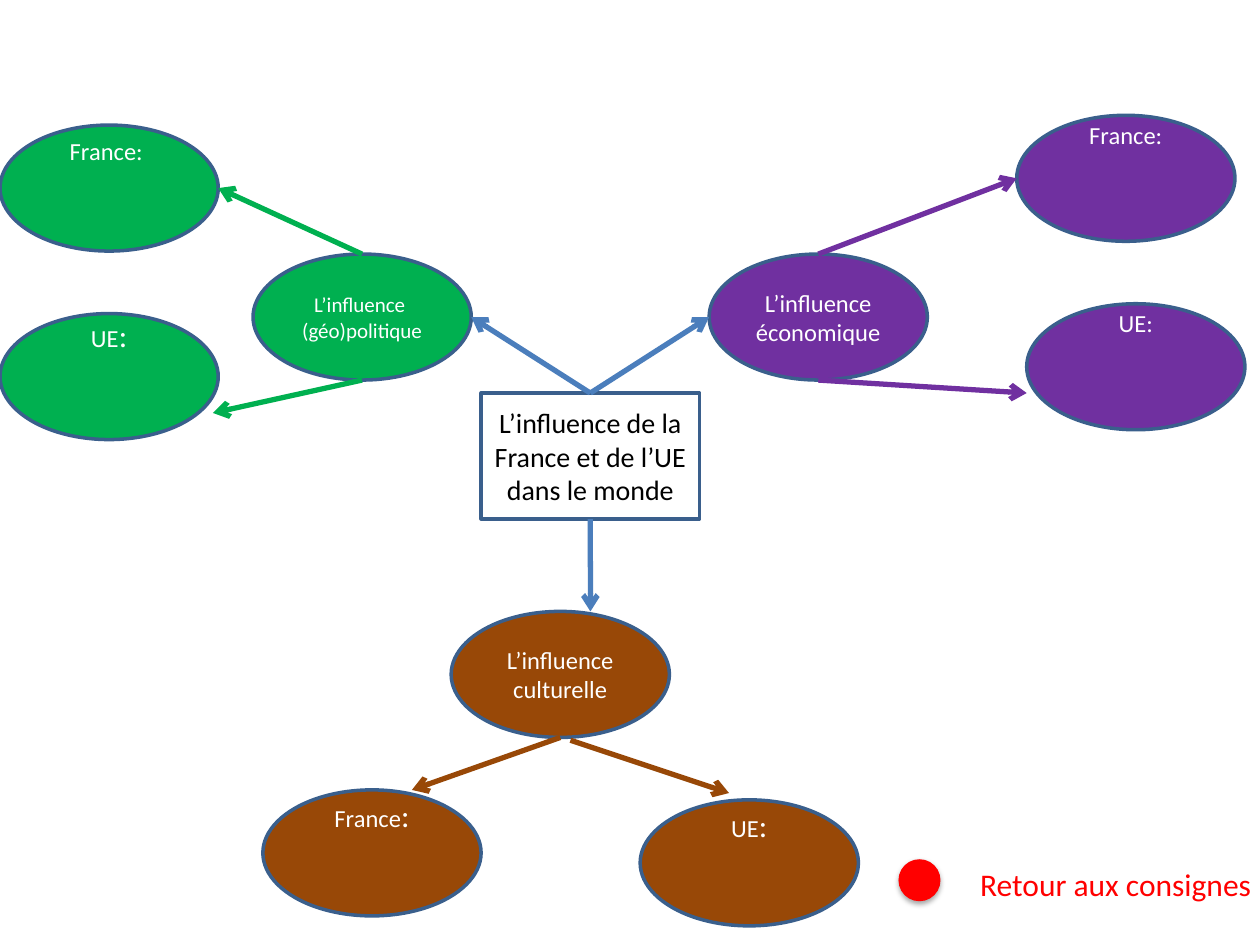
from lxml.etree import SubElement
from pptx import Presentation
from pptx.dml.color import RGBColor
from pptx.enum.shapes import MSO_CONNECTOR as CONN, MSO_SHAPE as SHAPE
from pptx.enum.text import MSO_ANCHOR as ANCHOR, PP_ALIGN as ALIGN
from pptx.oxml import parse_xml
from pptx.oxml.ns import nsdecls, qn
from pptx.util import Pt

WHITE = RGBColor(0xFF, 0xFF, 0xFF)
BLACK = RGBColor(0, 0, 0)
RED = RGBColor(0xFF, 0, 0)
GREEN = RGBColor(0, 0xB0, 0x50)
PURPLE = RGBColor(0x70, 0x30, 0xA0)
BROWN = RGBColor(0x98, 0x48, 0x07)
OUTLINE = RGBColor(0x3A, 0x5F, 0x8C)
BLUE = RGBColor(0x4B, 0x7E, 0xBC)

FONT = "Calibri"
NODE_W, NODE_H = 124.7, 72

THEMES = [
    ("L’influence  (géo)politique", 12, 144.6, 145.2, GREEN),
    ("L’influence économique", 14, 405.2, 145.2, PURPLE),
    ("L’influence culturelle", 14, 257.8, 349.4, BROWN),
]
DETAILS = [
    ([("France:", 14)], 581, 65.9, PURPLE, -8),
    ([("UE:", 14)], 586.7, 173.6, PURPLE, -8),
    ([("France: ", 14)], 0, 71.5, GREEN, -4.5),
    ([("UE", 14), (":", 18)], 0, 179.2, GREEN, -9),
    ([("France", 14), (":", 18)], 150.2, 451.4, BROWN, -7),
    ([("UE", 14), (":", 18)], 365.8, 457.1, BROWN, -7),
]
HUB_ARROWS = [(0, 405.2, 181.2), (0, 269.3, 181.2), (2, 337.4, 349.4)]
BRANCH_ARROWS = [
    (206.9, 145.2, 124.7, 107.5, GREEN),
    (206.9, 217.2, 121.7, 236, GREEN),
    (467.6, 145.2, 581, 101.9, PURPLE),
    (467.6, 217.2, 586.7, 224.6, PURPLE),
    (320.2, 421.4, 235.4, 451.4, BROWN),
    (326, 423, 416.6, 453.2, BROWN),
]


def add_runs(p, runs, color):
    """Add (text, size) runs to a paragraph."""
    for text, size in runs:
        r = p.add_run()
        r.text = text
        for name, value in {"name": FONT, "size": Pt(size)}.items():
            setattr(r.font, name, value)
        r.font.color.rgb = color


def add_node(s, kind, x, y, runs, fill=None, color=WHITE, top=None):
    """Add an outlined node with centred text, set from the top if given."""
    sp = s.shapes.add_shape(kind, Pt(x), Pt(y), Pt(NODE_W), Pt(NODE_H))
    sp.shadow.inherit = False
    if fill is None:
        sp.fill.background()
    else:
        sp.fill.solid()
        sp.fill.fore_color.rgb = fill
    sp.line.color.rgb = OUTLINE
    sp.line.width = Pt(2)
    tf = sp.text_frame
    fmt = {"word_wrap": True, "vertical_anchor": ANCHOR.MIDDLE}
    if top is not None:
        fmt.update(vertical_anchor=ANCHOR.TOP, margin_top=Pt(top))
    for name, value in fmt.items():
        setattr(tf, name, value)
    p = tf.paragraphs[0]
    p.alignment = ALIGN.CENTER
    add_runs(p, runs, color)
    return sp


def add_arrow(s, x1, y1, x2, y2, color):
    """Add a straight line with an open arrowhead at its end."""
    c = s.shapes.add_connector(CONN.STRAIGHT, Pt(x1), Pt(y1), Pt(x2), Pt(y2))
    c.line.color.rgb = color
    c.line.width = Pt(3)
    SubElement(c.line._get_or_add_ln(), qn("a:tailEnd"), type="arrow")
    SubElement(c._element.spPr, qn("a:effectLst"))
    return c


def add_return_button(s):
    """Add the red dot with its soft shadow and its label."""
    sp = s.shapes.add_shape(SHAPE.OVAL, Pt(513.4), Pt(491), Pt(24), Pt(24))
    sp.fill.solid()
    sp.fill.fore_color.rgb = RED
    sp.line.fill.background()
    sp._element.spPr.append(parse_xml(
        f'<a:effectLst {nsdecls("a")}><a:outerShdw blurRad="{Pt(3.1)}" '
        f'dist="{Pt(1.8)}" dir="5400000" rotWithShape="0"><a:srgbClr val="000000">'
        '<a:alpha val="35000"/></a:srgbClr></a:outerShdw></a:effectLst>'))
    tb = s.shapes.add_textbox(Pt(553), Pt(491), Pt(171.4), Pt(29))
    tb.text_frame.word_wrap = False
    add_runs(tb.text_frame.paragraphs[0], [("Retour aux consignes", 18)], RED)


def main():
    """Build the mind map slide."""
    prs = Presentation()
    prs.slide_width, prs.slide_height = Pt(720), Pt(540)
    s = prs.slides.add_slide(prs.slide_layouts[6])
    hub = add_node(s, SHAPE.RECTANGLE, 275, 224.6,
                   [("L’influence de la France et de l’UE dans le monde", 16)],
                   color=BLACK)
    for text, size, x, y, fill in THEMES:
        add_node(s, SHAPE.OVAL, x, y, [(text, size)], fill)
    for site, x, y in HUB_ARROWS:
        add_arrow(s, 337.4, 224.6, x, y, BLUE).begin_connect(hub, site)
    for runs, x, y, fill, top in DETAILS:
        add_node(s, SHAPE.OVAL, x, y, runs, fill, top=top)
    for arrow in BRANCH_ARROWS:
        add_arrow(s, *arrow)
    add_return_button(s)
    prs.save("out.pptx")


if __name__ == "__main__":
    main()
